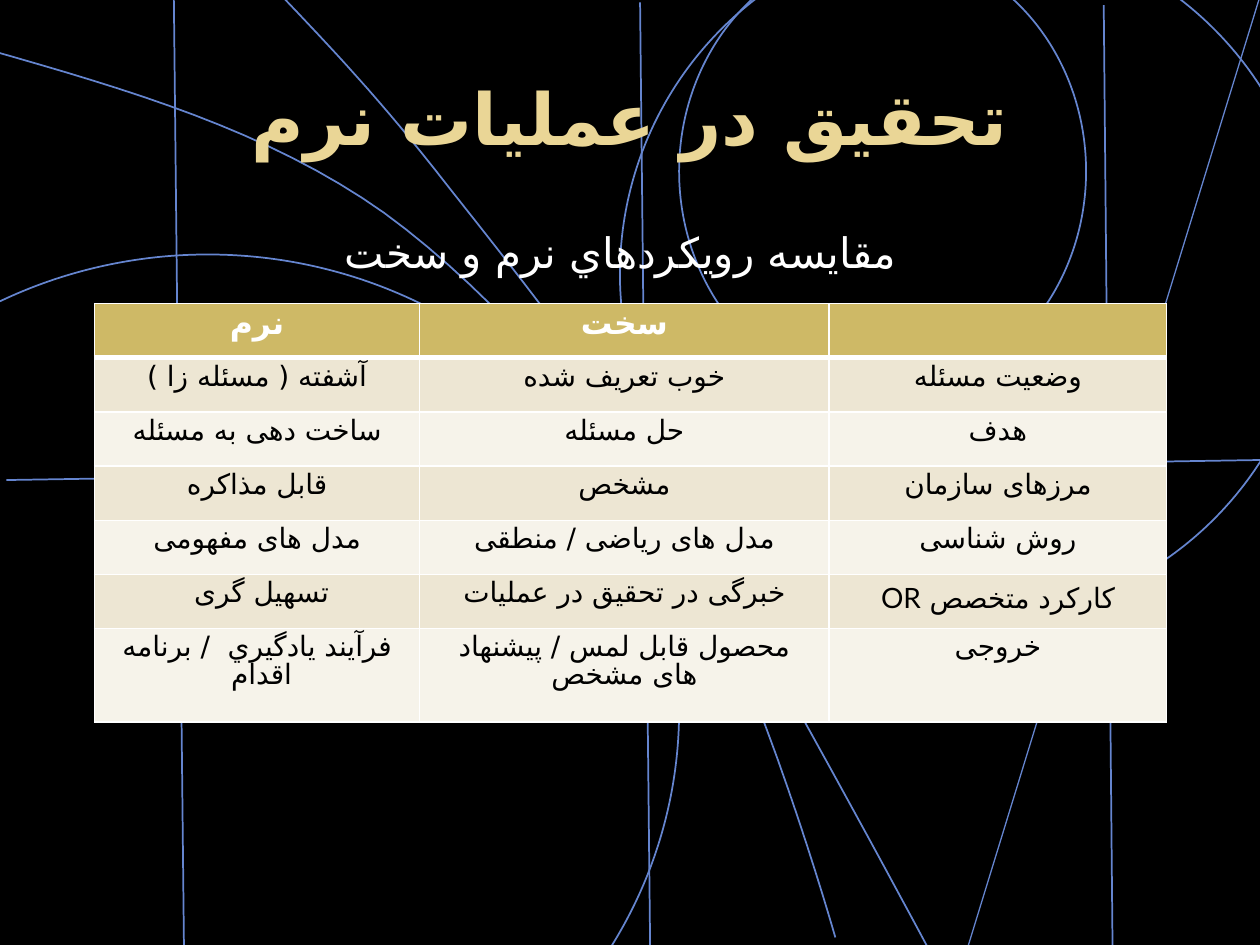
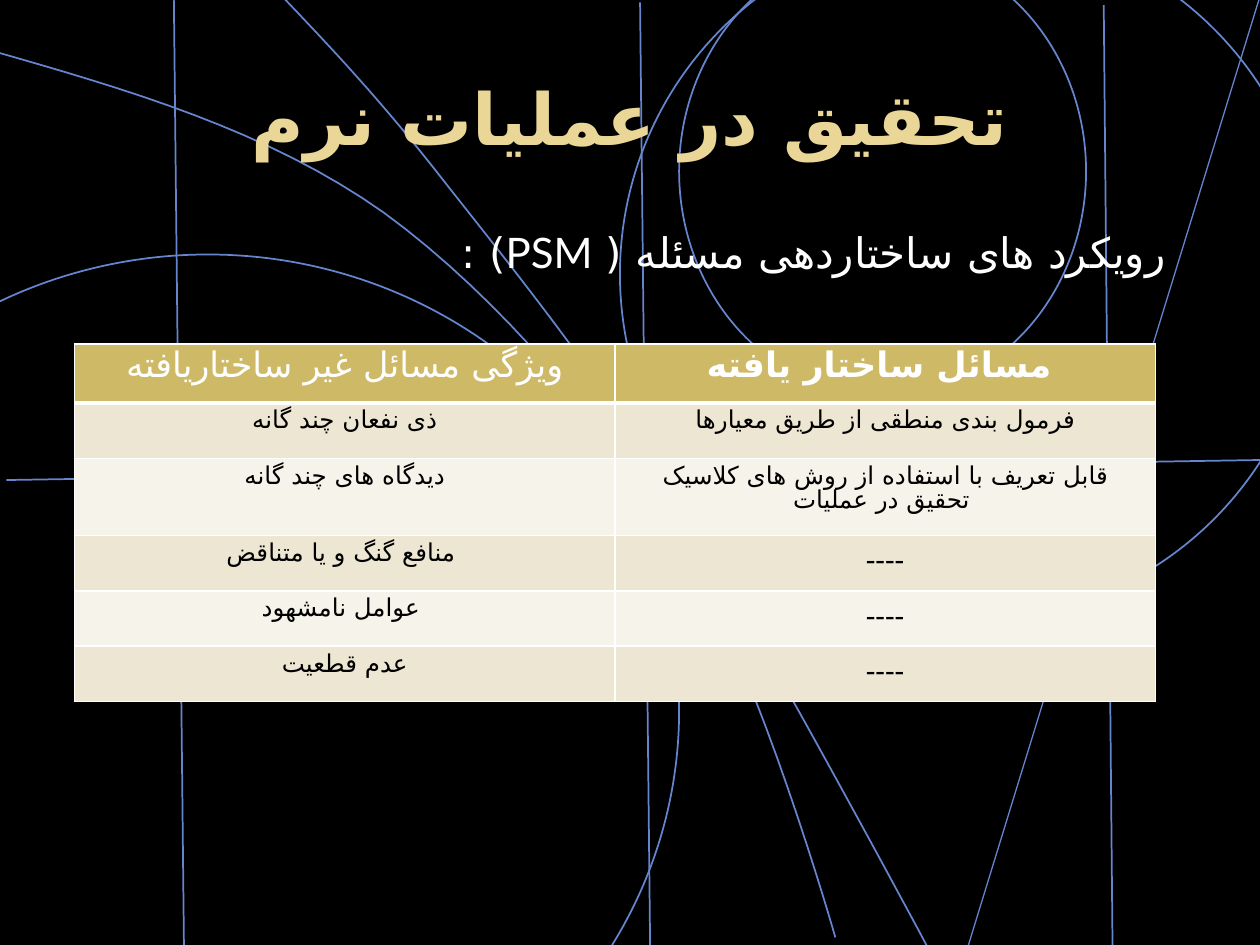
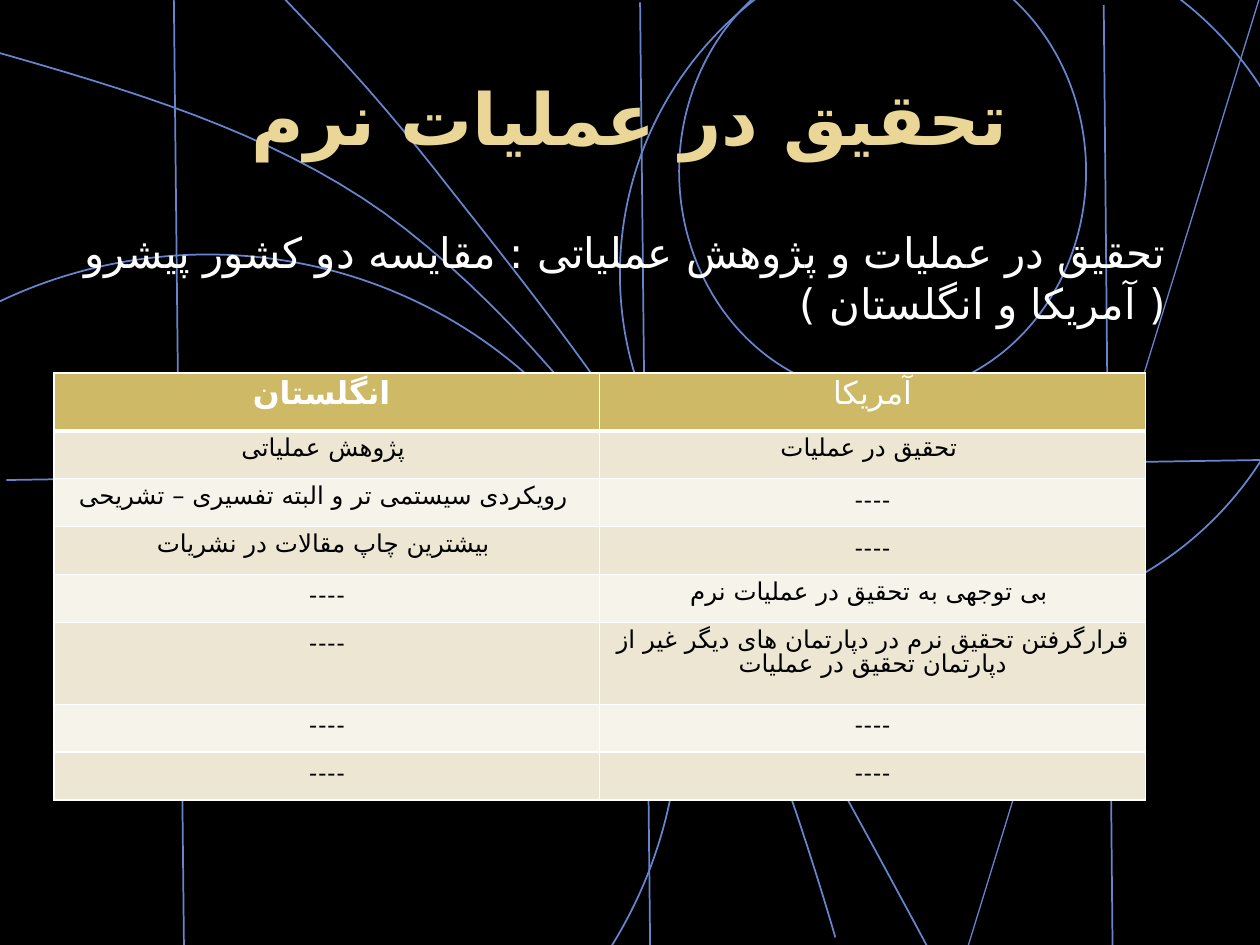
from pptx import Presentation
from pptx.dml.color import RGBColor
from pptx.enum import shapes, text
from pptx.oxml import xmlchemy
from pptx.util import Inches, Pt

BLACK = RGBColor(0x00, 0x00, 0x00)
WHITE = RGBColor(0xFF, 0xFF, 0xFF)
BLUE = RGBColor(0x65, 0x85, 0xCF)
CREAM = RGBColor(0xEA, 0xD6, 0x96)
GOLD = RGBColor(0xCE, 0xB9, 0x66)
BANDS = (RGBColor(0xF6, 0xF3, 0xEA), RGBColor(0xED, 0xE6, 0xD3))

FONT = "Lato"
PERSIAN_FONT = "DejaVu Sans"  # Persian letters, which Lato lacks
DASH = "----"
TITLE = "تحقیق در عملیات نرم"
TITLE_BOX = (0.5, 0.3, 9, 1.25)
BODY_BOX = (0.5, 1.75, 9, 5.15)
CENTER = text.PP_ALIGN.CENTER

# Background line art
ELLIPSES = [(5.39, -0.42, 3.23, 3.56), (4.92, -0.58, 5.52, 5.51),
            (-2.09, 2.02, 7.48, 7.24)]
LINES = [((1.38, 0), (1.46, 7.5), 1), ((5.08, 0.02), (5.16, 7.52), 1),
         ((8.76, 0.04), (8.83, 7.54), 1), ((10, -0.03), (7.68, 7.52), 0.75),
         ((0.05, 3.81), (10.05, 3.65), 1)]
CURVES = [
    [(-0.11, 0.39), (1.01, 0.71), (2.12, 1.03), (3.05, 1.69), (3.97, 2.36),
     (4.84, 3.41), (5.44, 4.37), (6.03, 5.33), (6.63, 7.44), (6.63, 7.44)],
    [(2.21, -0.06), (2.62, 0.37), (3.03, 0.8), (3.55, 1.47), (4.07, 2.13),
     (4.7, 2.91), (5.34, 3.92), (5.98, 4.93), (7.37, 7.53), (7.37, 7.53)],
]


def add_text(p, content, size=14, color=BLACK, bold=False, font=FONT,
             align=CENTER, rtl=False):
    """Write one formatted run into paragraph p."""
    p.alignment = align
    p._p.get_or_add_pPr().set("rtl", str(int(rtl)))
    r = p.add_run()
    r.text = content
    r.font.size, r.font.bold, r.font.name = Pt(size), bold, font
    r.font.color.rgb = color
    cs = xmlchemy.OxmlElement("a:cs")
    cs.set("typeface", PERSIAN_FONT)
    r._r.get_or_add_rPr().append(cs)


def place(sp, box):
    sp.left, sp.top, sp.width, sp.height = map(Inches, box)


def bezier_points(knots, steps=16):
    """Points along a chain of cubic curves, as lengths."""
    points = [tuple(map(Inches, knots[0]))]
    for i in range(0, len(knots) - 1, 3):
        for step in range(1, steps + 1):
            t = step / steps
            weights = ((1 - t) ** 3, 3 * t * (1 - t) ** 2,
                       3 * t ** 2 * (1 - t), t ** 3)
            points.append(tuple(
                Inches(sum(w * k[axis] for w, k in zip(weights, knots[i:i + 4])))
                for axis in (0, 1)))
    return points


def draw_background(prs, s):
    """Draw the line art on s, then move it to the shared master."""
    master = prs.slide_master
    master.background.fill.solid()
    master.background.fill.fore_color.rgb = BLACK

    outlines = [s.shapes.add_shape(shapes.MSO_SHAPE.OVAL, *map(Inches, box))
                for box in ELLIPSES]
    for knots in CURVES:
        points = bezier_points(knots)
        builder = s.shapes.build_freeform(*points[0])
        builder.add_line_segments(points[1:], close=False)
        outlines.append(builder.convert_to_shape())
    for sp in outlines:
        sp.fill.background()
        sp.shadow.inherit = False
        sp.line.width = Pt(1)

    connectors = []
    for start, end, width in LINES:
        line = s.shapes.add_connector(shapes.MSO_CONNECTOR.STRAIGHT,
                                      *map(Inches, start + end))
        line.line.width = Pt(width)
        line._element.spPr.append(xmlchemy.OxmlElement("a:effectLst"))
        connectors.append(line)

    for i, sp in enumerate(outlines + connectors):
        sp.line.color.rgb = BLUE
        master.shapes.element.insert(2 + i, sp._element)


def fill_title(s):
    place(s.shapes.title, TITLE_BOX)
    tf = s.shapes.title.text_frame
    tf.vertical_anchor = text.MSO_ANCHOR.MIDDLE
    add_text(tf.paragraphs[0], TITLE, size=41, color=CREAM, bold=True)


def fill_body(s, content, align):
    sp = s.placeholders[1]
    place(sp, BODY_BOX)
    p = sp.text_frame.paragraphs[0]
    add_text(p, content, size=24, color=WHITE, align=align, rtl=True)
    pPr = p._p.get_or_add_pPr()
    pPr.set("marL", str(Inches(0.15)))
    pPr.set("indent", "0")
    pPr.append(xmlchemy.OxmlElement("a:buNone"))


def set_borders(cell, top, bottom):
    tcPr = cell._tc.get_or_add_tcPr()
    for side, width in (("L", 1), ("R", 1), ("T", top), ("B", bottom)):
        ln = xmlchemy.OxmlElement(f"a:ln{side}")
        ln.set("w", str(Pt(width)))
        color = xmlchemy.OxmlElement("a:srgbClr")
        color.set("val", str(WHITE))
        fill = xmlchemy.OxmlElement("a:solidFill")
        fill.append(color)
        ln.append(fill)
        tcPr.append(ln)


def add_comparison(s, left, top, cols, heights, rows, head_size, head_bold,
                   size, rtl=False, dash=None):
    """Table with a gold header row and banded body rows."""
    table = s.shapes.add_table(len(rows), len(cols), Inches(left), Inches(top),
                               Inches(sum(cols)), Inches(sum(heights))).table
    for col, width in zip(table.columns, cols):
        col.width = Inches(width)
    for i, (row, height) in enumerate(zip(table.rows, heights)):
        row.height = Inches(height)
        for j, content in enumerate(rows[i]):
            cell = row.cells[j]
            set_borders(cell, top=3 if i == 1 else 1, bottom=1 if i else 3)
            cell.fill.solid()
            cell.fill.fore_color.rgb = BANDS[i % 2] if i else GOLD
            if not content:
                continue
            style = dict(size=size, rtl=rtl)
            if i == 0:
                style = dict(size=head_size, color=WHITE, bold=head_bold[j])
            elif content == DASH:
                style.update(dash or {})
            p = cell.text_frame.paragraphs[0]
            add_text(p, content, **style)
            # Purely Persian lines are set tighter
            if content != DASH and "OR" not in content:
                p.line_spacing = 0.85


SLIDES = [
    dict(body="ﻣﻘﺎﯾﺴﻪ روﯾﮑﺮدﻫﺎي ﻧﺮم و ﺳﺨﺖ", align=CENTER,
         table=dict(
             left=0.75, top=2.41, cols=[2.58, 3.25, 2.68],
             heights=[0.43] * 6 + [0.74],
             head_size=18, head_bold=(True, True, True), size=16, rtl=True,
             rows=[
                 ("نرم", "ﺳﺨﺖ", ""),
                 ("آشفته ( مسئله زا )", "ﺧﻮب ﺗﻌﺮﯾﻒ ﺷﺪه", "وضعیت مسئله"),
                 ("ساخت دهی به مسئله", "حل مسئله", "هدف"),
                 ("قابل مذاکره", "مشخص", "مرزهای سازمان"),
                 ("مدل های مفهومی", "مدل های ریاضی / منطقی", "روش شناسی"),
                 ("تسهیل گری ", "خبرگی در تحقیق در عملیات", "کارکرد متخصص OR"),
                 ("ﻓﺮآﯾﻨﺪ ﯾﺎدﮔﯿﺮي  / برنامه اقدام ",
                  "ﻣﺤﺼﻮل ﻗﺎﺑﻞ ﻟﻤﺲ / پیشنهاد های مشخص", "خروجی"),
             ])),
    dict(body="رویکرد های ساختاردهی مسئله ( PSM) :",
         align=text.PP_ALIGN.JUSTIFY,
         table=dict(
             left=0.59, top=2.73, cols=[4.29] * 2,
             heights=[0.47, 0.44, 0.61] + [0.44] * 3,
             head_size=20, head_bold=(False, True), size=14,
             dash=dict(size=18, font="Calibri"),
             rows=[
                 ("ویژگی مسائل غیر ساختاریافته", "مسائل ساختار یافته "),
                 ("ذی نفعان چند گانه", "فرمول بندی منطقی از طریق معیارها"),
                 ("دیدگاه های چند گانه",
                  "قابل تعریف با استفاده از روش های کلاسیک تحقیق در عملیات "),
                 ("منافع گنگ و یا متناقض ", DASH),
                 ("عوامل نامشهود ", DASH),
                 ("عدم قطعیت", DASH),
             ])),
    dict(body="تحقیق در عملیات و پژوهش عملیاتی : مقایسه دو کشور پیشرو "
              "( آمریکا و انگلستان )",
         align=text.PP_ALIGN.RIGHT,
         table=dict(
             left=0.43, top=2.96, cols=[4.33] * 2,
             heights=[0.46] + [0.38] * 4 + [0.65] + [0.38] * 2,
             head_size=18, head_bold=(True, False), size=14,
             rows=[
                 ("انگلستان ", "آمریکا"),
                 ("پژوهش عملیاتی ", "تحقیق در عملیات "),
                 ("رویکردی سیستمی تر و البته تفسیری – تشریحی ", DASH),
                 ("بیشترین چاپ مقالات در نشریات ", DASH),
                 (DASH, "بی توجهی به تحقیق در عملیات نرم "),
                 (DASH, "قرارگرفتن تحقیق نرم در دپارتمان های دیگر غیر از "
                        "دپارتمان تحقیق در عملیات"),
                 (DASH, DASH),
                 (DASH, DASH),
             ])),
]


def main():
    prs = Presentation()
    prs.slide_width, prs.slide_height = Inches(10), Inches(7.5)
    for i, content in enumerate(SLIDES):
        s = prs.slides.add_slide(prs.slide_layouts[1])
        if i == 0:
            draw_background(prs, s)
        fill_title(s)
        fill_body(s, content["body"], content["align"])
        add_comparison(s, **content["table"])
    prs.save("out.pptx")


if __name__ == "__main__":
    main()
